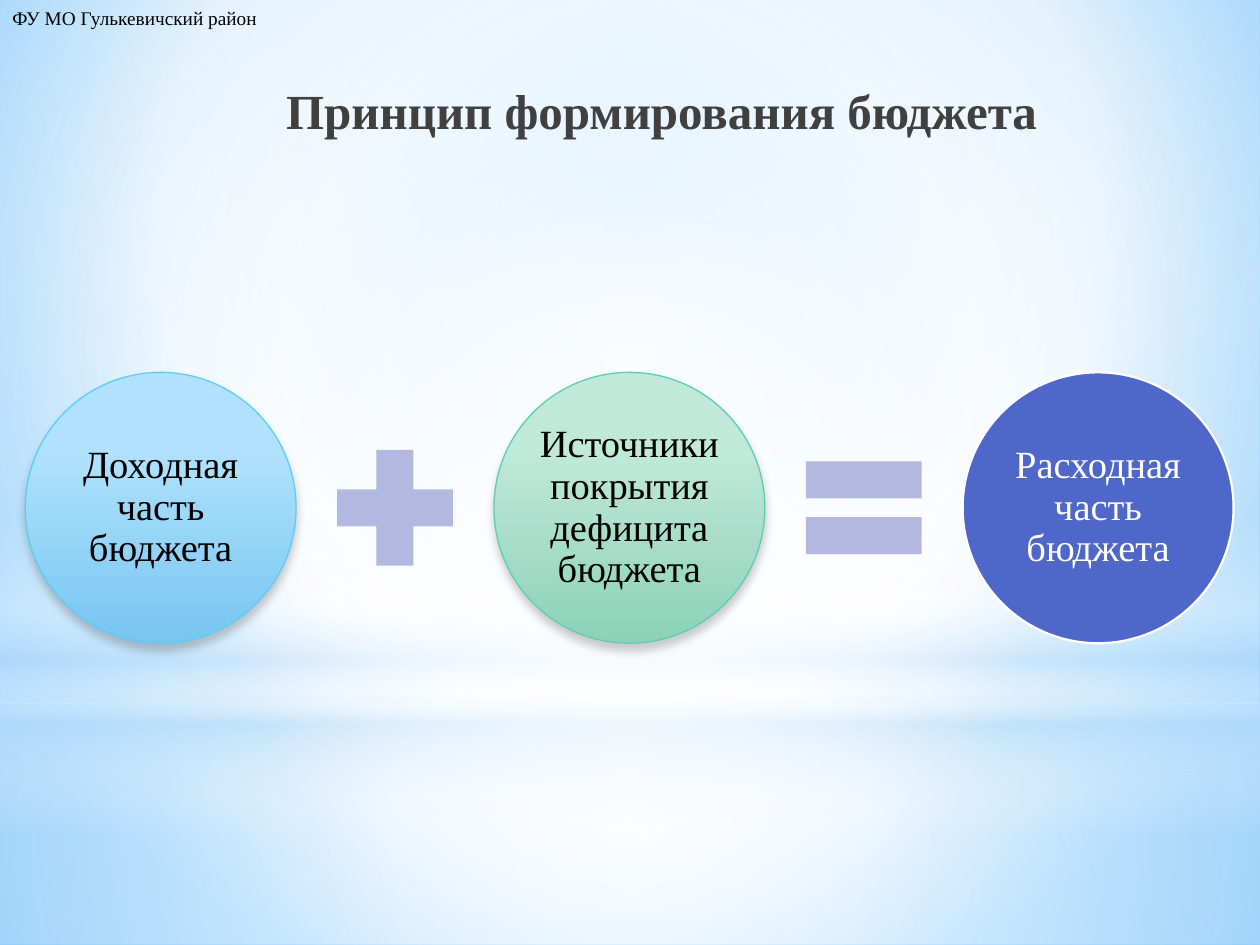
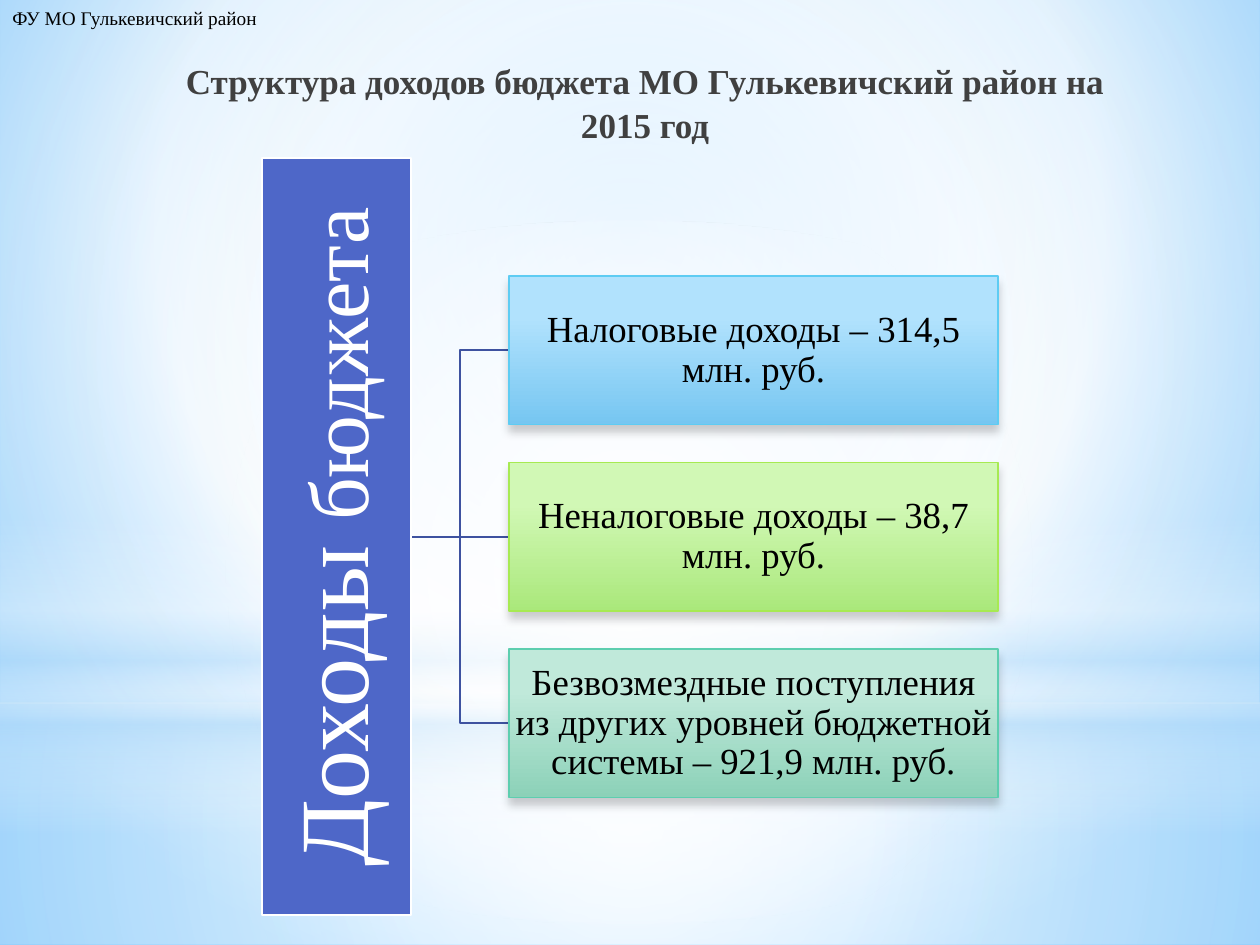
from lxml import etree
from pptx import Presentation
from pptx.dml.color import RGBColor
from pptx.enum.shapes import MSO_CONNECTOR, MSO_SHAPE
from pptx.enum.text import MSO_ANCHOR, MSO_AUTO_SIZE, PP_ALIGN
from pptx.oxml.ns import qn
from pptx.util import Inches, Pt

RECT, OVAL = MSO_SHAPE.RECTANGLE, MSO_SHAPE.OVAL
PLUS, EQUAL = MSO_SHAPE.MATH_PLUS, MSO_SHAPE.MATH_EQUAL
STRAIGHT, ELBOW = MSO_CONNECTOR.STRAIGHT, MSO_CONNECTOR.ELBOW
CENTER = PP_ALIGN.CENTER
TOP, MIDDLE = MSO_ANCHOR.TOP, MSO_ANCHOR.MIDDLE

FONT = "Times New Roman"
COLUMNS, ROWS = 10, 7.5  # square grid cells across and down the slide
CELL = Inches(1)
TITLE_ONLY = 5
OWNER = "ФУ МО Гулькевичский район"

COLORS = {
    "white": "FFFFFF", "black": "000000", "title": "404040",
    "indigo": "4E67C8", "sign": "B2B8E0", "branch": "3E52A0",
    "sky": "9ED5FF", "azure": "5BB9FF", "haze": "B4DCFA",
    "blue_light": "B1E2FD", "blue_dark": "76C6F1", "blue_edge": "5ECCF3",
    "mint_light": "C0E9DA", "mint_dark": "8CD1B8", "mint_edge": "5DCEAF",
    "lime_light": "D1F8B5", "lime_dark": "AAE87B", "lime_edge": "A7EA52",
}


def grid(*cells):
    """Turn grid cells into slide lengths."""
    return [round(cell * CELL) for cell in cells]


def rgb(name):
    return RGBColor.from_string(COLORS[name])


def add_child(parent, tag, **attributes):
    child = etree.SubElement(parent, qn(tag))
    for key, value in attributes.items():
        child.set(key, str(value))
    return child


def add_color(parent, name, opacity=100):
    color = add_child(parent, "a:srgbClr", val=COLORS[name])
    if opacity < 100:
        add_child(color, "a:alpha", val=opacity * 1000)


def set_gradient(fill, owner, stops, focus=None):
    """Fill with stops (position, colour, opacity): vertical, or round a focus."""
    fill.solid()
    solid = owner.find(".//" + qn("a:solidFill"))
    gradient = etree.Element(qn("a:gradFill"), rotWithShape="1")
    stop_list = add_child(gradient, "a:gsLst")
    for position, *color in stops:
        add_color(add_child(stop_list, "a:gs", pos=position * 1000), *color)
    if focus:
        circle = add_child(gradient, "a:path", path="circle")
        edges = {side: share * 1000 for side, share in zip("ltrb", focus)}
        add_child(circle, "a:fillToRect", **edges)
    else:
        add_child(gradient, "a:lin", ang=90 * 60000, scaled=0)
    solid.getparent().replace(solid, gradient)


def add_plain(slide, kind, box, color=None):
    """Add a shape without line or shadow."""
    shape = slide.shapes.add_shape(kind, *grid(*box))
    shape.shadow.inherit = False
    shape.line.fill.background()
    if color:
        shape.fill.solid()
        shape.fill.fore_color.rgb = rgb(color)
    return shape


def set_line(line, color, width):
    line.color.rgb = rgb(color)
    line.width = Pt(width)


def format_run(run, size, color, bold=False):
    run.font.name, run.font.size, run.font.bold = FONT, Pt(size), bold
    run.font.color.rgb = rgb(color)


def set_insets(frame, inset):
    frame.margin_left = frame.margin_right = Inches(inset)
    frame.margin_top = frame.margin_bottom = Inches(inset)


def add_label(shape, parts, color, inset):
    """Write centred text given as (text, size) parts."""
    frame = shape.text_frame
    frame.word_wrap = True
    frame.vertical_anchor = MIDDLE
    set_insets(frame, inset)
    line = frame.paragraphs[0]
    line.alignment, line.line_spacing = CENTER, 0.9
    for text, size in parts:
        run = line.add_run()
        run.text = text
        format_run(run, size, color)


def add_block(slide, kind, box, hue, parts, inset):
    """Add a labelled block: solid indigo, or shaded with a soft shadow."""
    block = add_plain(slide, kind, box, "indigo")
    if hue == "indigo":
        set_line(block.line, "white", 1.25)
        add_label(block, parts, "white", inset)
        return block
    set_gradient(block.fill, block.element,
                 [(28, hue + "_light"), (100, hue + "_dark")])
    set_line(block.line, hue + "_edge", 0.75)
    effects = block.element.spPr.find(qn("a:effectLst"))
    shadow = add_child(effects, "a:outerShdw", blurRad=Pt(5), dist=Pt(4),
                       dir=90 * 60000, rotWithShape=0)
    add_color(shadow, "black", 20)
    add_label(block, parts, "black", inset)
    return block


def add_branch(slide, start, end):
    kind = STRAIGHT if start[1] == end[1] else ELBOW
    branch = slide.shapes.add_connector(kind, *grid(*start, *end))
    set_line(branch.line, "branch", 1.25)
    add_child(branch.element.spPr, "a:effectLst")


def add_backdrop(master, slide):
    """Give the master its sky gradient and four veils of light."""
    set_gradient(master.background.fill, master.element,
                 [(0, "sky"), (60, "white"), (100, "azure")], (20, 10, 20, 60))
    center = (50, 50, 50, 50)
    horizon = 5.58
    veils = [
        (RECT, (0, horizon, COLUMNS, ROWS - horizon), center,
         [(0, "white", 91), (37, "white", 76), (100, "haze", 79)]),
        (RECT, (0, 0, COLUMNS, horizon), center,
         [(0, "white", 89), (48, "white", 62), (100, "haze", 79)]),
        (RECT, (0, 4.12, COLUMNS, 2.5), None,
         [(0, "white", 0), (29, "white", 30), (45, "haze", 40),
          (55, "white", 26), (65, "haze", 60), (100, "white", 0)]),
        (OVAL, (0, 1.75, COLUMNS, horizon), center,
         [(0, "white"), (56, "white", 0)]),
    ]
    for order, (kind, box, focus, stops) in enumerate(veils):
        veil = add_plain(slide, kind, box)
        set_gradient(veil.fill, veil.element, stops, focus)
        veil.element.nvSpPr.cNvPr.set("id", str(100 + order))
        master.shapes.element.insert(2 + order, veil.element)


def add_heading(slide, text, box, size):
    """Format the title and add the owner's mark in the corner."""
    title = slide.shapes.title
    title.left, title.top, title.width, title.height = grid(*box)
    frame = title.text_frame
    frame.text = text
    frame.word_wrap, frame.auto_size = True, MSO_AUTO_SIZE.NONE
    frame.vertical_anchor = TOP
    set_insets(frame, 0.1)
    heading = frame.paragraphs[0]
    heading.alignment, heading.line_spacing = CENTER, 1.04
    format_run(heading.runs[0], size, "title", bold=True)

    owner = slide.shapes.add_textbox(*grid(0, 0, 2.25, 0.29)).text_frame
    owner.word_wrap = False
    owner.text = OWNER
    format_run(owner.paragraphs[0].runs[0], 11, "black")


def build_principle(slide):
    """Income plus deficit sources equals spending."""
    add_heading(slide, "Принцип формирования бюджета", (1.69, 0.52, 7.12, 0.79), 28)
    circle, sign, gap, axis = 2.15, 1.25, 0.16, 4.03
    terms = [
        ("Доходная часть бюджета", "blue", PLUS),
        ("Источники покрытия дефицита бюджета", "mint", EQUAL),
        ("Расходная часть бюджета", "indigo", None),
    ]
    left = 0.2
    for text, hue, operator in terms:
        add_block(slide, OVAL, (left, axis - circle / 2, circle, circle),
                  hue, [(text, 22)], 0.03)
        left += circle + gap
        if operator:
            add_plain(slide, operator, (left, axis - sign / 2, sign, sign), "sign")
            left += sign + gap


def build_income(slide):
    """Budget income and its three sources."""
    add_heading(slide, "Структура доходов бюджета МО Гулькевичский район на 2015 год",
                (1.22, 0.36, 7.8, 0.84), 20)
    sources = [
        ("Налоговые доходы – 314,5 млн. руб.", "blue"),
        ("Неналоговые доходы – 38,7 млн. руб.", "lime"),
        ("Безвозмездные поступления из других уровней бюджетной системы"
         " – 921,9 млн. руб.", "mint"),
    ]
    thickness, pitch, axis = 1.18, 1.48, 4.26
    root_length, root_right, source_left, source_width = 6.01, 3.26, 4.04, 3.88
    middles = [axis + pitch * (row - 1) for row in range(len(sources))]

    for middle in middles:
        add_branch(slide, (root_right, axis), (source_left, middle))

    # Upright bar, turned round its centre
    root_left = root_right - thickness / 2 - root_length / 2
    root = add_block(slide, RECT,
                     (root_left, axis - thickness / 2, root_length, thickness),
                     "indigo", [("Доходы ", 56), ("бюджета", 48)], 0.04)
    root.rotation = 270

    for middle, (text, hue) in zip(middles, sources):
        add_block(slide, RECT,
                  (source_left, middle - thickness / 2, source_width, thickness),
                  hue, [(text, 21)], 0.01)


def main():
    deck = Presentation()
    deck.slide_width, deck.slide_height = grid(COLUMNS, ROWS)
    layout = deck.slide_layouts[TITLE_ONLY]
    principle, income = [deck.slides.add_slide(layout) for _ in range(2)]
    add_backdrop(deck.slide_master, principle)
    build_principle(principle)
    build_income(income)
    deck.save("out.pptx")


if __name__ == "__main__":
    main()
